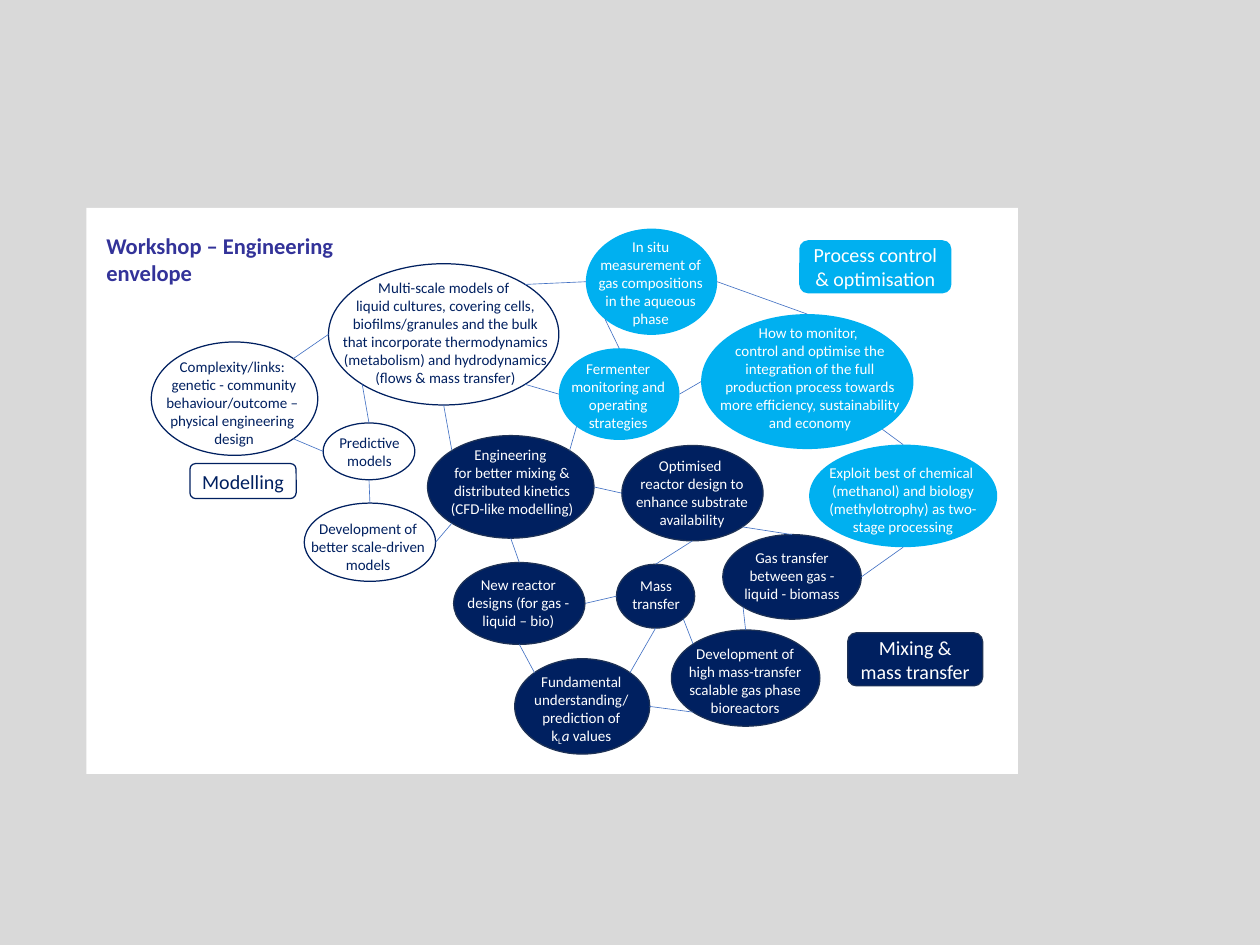
"""Builds the workshop mind map of the engineering envelope."""
from math import sqrt

from lxml.etree import SubElement
from pptx import Presentation
from pptx.dml.color import RGBColor
from pptx.enum.shapes import MSO_CONNECTOR as Link, MSO_SHAPE as Form
from pptx.enum.text import MSO_ANCHOR as Anchor, MSO_AUTO_SIZE as Fit, PP_ALIGN as Align
from pptx.oxml.ns import qn
from pptx.util import Pt

COLOURS = {"backdrop": "D9D9D9", "white": "FFFFFF", "navy": "002060", "rim": "1E3256",
           "sky": "00B0F0", "title": "333399", "link": "4472C4"}
THEMES = {"mixing": ("navy", "rim", "white"),
          "modelling": ("white", "navy", "navy"),
          "control": ("sky", None, "white")}
D = 1 / sqrt(2)
COMPASS = {"n": (0, -1), "ne": (D, -D), "e": (1, 0), "se": (D, D),
           "s": (0, 1), "sw": (-D, D), "w": (-1, 0), "nw": (-D, -D)}

TOPICS = {
    "designs": ("mixing", (362.9, 450, 105.1, 65.5), (366.5, 457.2, 96.5, 51.1),
                "New reactor designs (for gas - liquid – bio)"),
    "transfer": ("mixing", (493.2, 451.4, 62.6, 51.1), (485.3, 457.9, 79.2, 36),
                 "Mass transfer"),
    "prediction": ("mixing", (411.8, 527, 108, 76.3), (418.3, 534.2, 93.6, 65.5),
                   "Fundamental understanding/prediction of k"),
    "kinetics": ("mixing", (342, 348.5, 133.2, 82.1), (347.8, 352.8, 123.8, 65.5),
                 "Engineering \nfor better mixing & distributed kinetics (CFD-like modelling)"),
    "gas": ("mixing", (578.2, 427.7, 110.9, 67.7), (585.4, 434.9, 96.5, 51.1),
            "Gas transfer between gas - liquid - biomass"),
    "bioreactors": ("mixing", (537.1, 504, 118.8, 77), (543.6, 511.9, 105.1, 62.6),
                    "Development of high mass-transfer scalable gas phase bioreactors"),
    "substrate": ("mixing", (497.5, 356.4, 113, 76.3), (501.1, 361.4, 105.1, 65.5),
                  "Optimised \nreactor design to enhance substrate availability"),
    "complexity": ("modelling", (121, 273.6, 133.2, 90.7), (106.6, 282.2, 161.3, 79.9),
                   "Complexity/links: \ngenetic - community behaviour/outcome – \n"
                   "physical engineering \ndesign"),
    "predictive": ("modelling", (258.5, 338.4, 73.4, 45.4), (262.8, 343.4, 65.5, 36),
                   "Predictive models"),
    "multiscale": ("modelling", (262.8, 211, 184.3, 113), (265.7, 218.9, 181.4, 94.3),
                   "Multi-scale models of \nliquid cultures, covering cells, biofilms/granules "
                   "and the bulk that incorporate thermodynamics (metabolism) and "
                   "hydrodynamics (flows & mass transfer)"),
    "scale": ("modelling", (243.4, 402.5, 105.1, 62.6), (240.5, 411.8, 108, 51.1),
              "Development of better scale-driven models"),
    "in situ": ("control", (468.7, 182.9, 105.1, 85), (466.6, 186.5, 108, 79.9),
                "In situ measurement of gas compositions in the aqueous phase"),
    "fermenter": ("control", (447.1, 278.6, 96.5, 73.4), (440.6, 283.7, 108, 65.5),
                  "Fermenter monitoring and operating strategies"),
    "integration": ("control", (560.9, 251.3, 169.9, 108), (561.6, 255.6, 172.8, 94.3),
                    "How to monitor, \ncontrol and optimise the integration of the full "
                    "production process towards more efficiency, sustainability and economy"),
    "chemical": ("control", (647.3, 355.7, 150.5, 82.1), (653, 367.2, 139, 65.5),
                 "Exploit best of chemical \n(methanol) and biology (methylotrophy) "
                 "as two-stage processing"),
}
LEGEND = [("control", (639.4, 192.2, 121.7, 42.5), "Process control & optimisation"),
          ("modelling", (151.9, 370.8, 85, 28.1), "Modelling"),
          ("mixing", (678.2, 506.2, 108, 42.5), "Mixing & mass transfer")]
LINKS = [("multiscale", "w", "complexity", "ne"), ("scale", "n", "predictive", "s"),
         ("multiscale", "sw", "predictive", "n"), ("substrate", "w", "kinetics", "e"),
         ("designs", "e", "transfer", "w"), ("prediction", "nw", "designs", "s"),
         ("prediction", "ne", "transfer", "s"), ("prediction", "e", "bioreactors", "sw"),
         ("transfer", "se", "bioreactors", "nw"), ("transfer", "n", "substrate", "s"),
         ("designs", "n", "kinetics", "s"), ("in situ", "e", "integration", "n"),
         ("bioreactors", "n", "gas", "sw"), ("chemical", "n", "integration", "se"),
         ("fermenter", "n", "in situ", "sw"), ("fermenter", "sw", "kinetics", "ne"),
         ("multiscale", "se", "fermenter", "w"), ("multiscale", "ne", "in situ", "w"),
         ("fermenter", "e", "integration", "w"), ("scale", "e", "kinetics", "sw"),
         ("gas", "n", "substrate", "se"), ("complexity", "se", "predictive", "w"),
         ("kinetics", "nw", "multiscale", "s"), ("chemical", "s", "gas", "e")]


def colour(name):
    """Look up a named colour."""
    return RGBColor.from_string(COLOURS[name])


def points(values):
    """Turn plain numbers into point lengths."""
    return [Pt(value) for value in values]


def rim_point(topic, side):
    """Find where a compass direction meets the oval of a topic."""
    left, top, width, height = TOPICS[topic][1]
    across, down = COMPASS[side]
    return points((left + width / 2 * (1 + across), top + height / 2 * (1 + down)))


class MindMap:
    """Holds the style and the current slide."""

    def __init__(self, slide, font="Calibri"):
        """Take the slide and paint its backdrop."""
        self.slide, self.font = slide, font
        slide.background.fill.solid()
        slide.background.fill.fore_color.rgb = colour("backdrop")

    def fill_text(self, frame, text, size, ink, align=Align.CENTER, bold=False, **layout):
        """Fill a text frame and format every run."""
        frame.text = text
        for name, value in {"word_wrap": True, **layout}.items():
            setattr(frame, name, value)
        for paragraph in frame.paragraphs:
            paragraph.alignment = align
            for run in paragraph.runs:
                self.style(run, size, ink, bold=bold)

    def style(self, run, size, ink, **extra):
        """Format one run."""
        for name, value in {"name": self.font, "size": Pt(size), **extra}.items():
            setattr(run.font, name, value)
        run.font.color.rgb = colour(ink)

    def panel(self, form, box, fill, line=None, parent=None):
        """Draw a filled preset shape."""
        panel = (parent or self.slide).shapes.add_shape(form, *points(box))
        panel.shadow.inherit = False
        panel.fill.solid()
        panel.fill.fore_color.rgb = colour(fill)
        if line:
            panel.line.color.rgb = colour(line)
            panel.line.width = Pt(1)
        else:
            panel.line.fill.background()
        return panel

    def title(self, text, box):
        """Place the title above the panel."""
        title = self.slide.shapes.title
        for name, value in zip(("left", "top", "width", "height"), points(box)):
            setattr(title, name, value)
        self.fill_text(title.text_frame, text, 18, "title", Align.LEFT, True,
                       vertical_anchor=Anchor.TOP, auto_size=Fit.NONE)
        self.slide.shapes._spTree.append(title._element)

    def topic(self, theme, oval, box, text):
        """Draw an oval grouped with its text and return the text frame."""
        fill, line, ink = THEMES[theme]
        group = self.slide.shapes.add_group_shape()
        self.panel(Form.OVAL, oval, fill, line, group)
        frame = group.shapes.add_textbox(*points(box)).text_frame
        self.fill_text(frame, text, 12, ink, auto_size=Fit.SHAPE_TO_FIT_TEXT)
        return frame

    def key(self, theme, box, text):
        """Draw a rounded legend label."""
        fill, line, ink = THEMES[theme]
        label = self.panel(Form.ROUNDED_RECTANGLE, box, fill, line)
        self.fill_text(label.text_frame, text, 16, ink, vertical_anchor=Anchor.MIDDLE)

    def link(self, start, start_side, end, end_side):
        """Join two topics with a thin line."""
        link = self.slide.shapes.add_connector(
            Link.STRAIGHT, *rim_point(start, start_side), *rim_point(end, end_side))
        link.line.color.rgb = colour("link")
        link.line.width = Pt(0.5)
        SubElement(link._element.spPr, qn("a:effectLst"))


def main():
    """Build and save the slide."""
    deck = Presentation()
    deck.slide_width, deck.slide_height = Pt(1008), Pt(756)
    mind_map = MindMap(deck.slides.add_slide(deck.slide_layouts[5]))
    mind_map.panel(Form.RECTANGLE, (69.1, 166.3, 745.2, 452.9), "white")
    frames = {name: mind_map.topic(*topic) for name, topic in TOPICS.items()}
    symbol = frames["prediction"].paragraphs[0]
    for text, italic, baseline in (("L", False, "-25000"), ("a", True, "0"),
                                   (" values", False, "0")):
        run = symbol.add_run()
        run.text = text
        mind_map.style(run, 12, "white", italic=italic)
        run._r.get_or_add_rPr().set("baseline", baseline)
    for entry in LEGEND:
        mind_map.key(*entry)
    mind_map.title("Workshop – Engineering envelope", (77.8, 182.2, 202.3, 51.1))
    for ends in LINKS:
        mind_map.link(*ends)
    deck.save("out.pptx")


if __name__ == "__main__":
    main()
